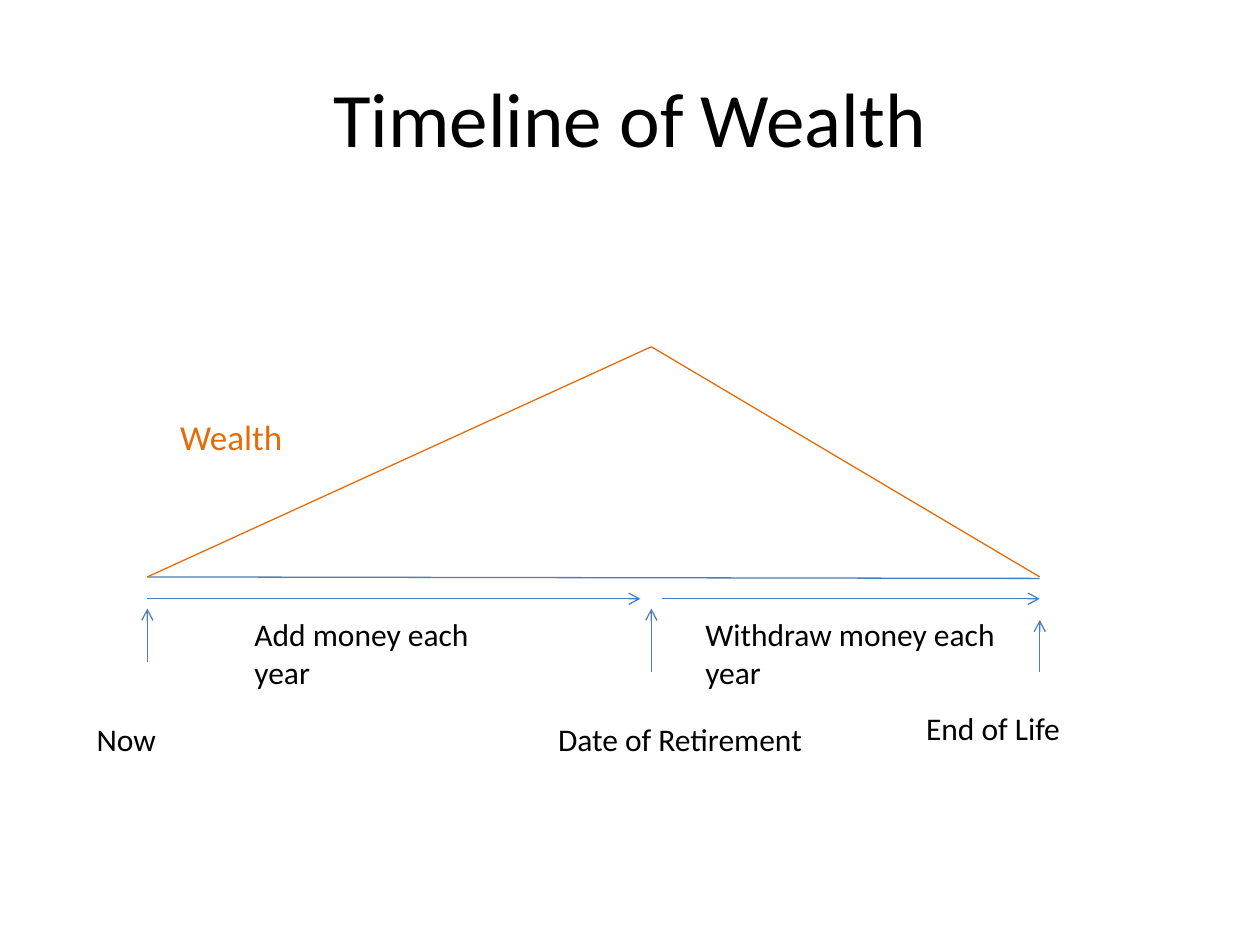
from dataclasses import dataclass

from lxml.etree import SubElement
from pptx import Presentation
from pptx.dml.color import RGBColor
from pptx.enum.shapes import MSO_CONNECTOR
from pptx.enum.text import MSO_ANCHOR, MSO_AUTO_SIZE, PP_ALIGN
from pptx.oxml.ns import qn
from pptx.slide import Slide
from pptx.text.text import TextFrame
from pptx.util import Cm, Pt


@dataclass(frozen=True)
class Theme:
    font: str = "Calibri"
    ink: RGBColor = RGBColor(0x00, 0x00, 0x00)
    time: RGBColor = RGBColor(0x4B, 0x7E, 0xBC)
    wealth: RGBColor = RGBColor(0xE4, 0x6C, 0x0A)
    title_size: float = 44
    wealth_size: float = 20
    label_size: float = 18
    line_width: float = 0.75


THEME = Theme()


@dataclass(frozen=True)
class Segment:
    x1: float
    y1: float
    x2: float
    y2: float
    color: RGBColor = THEME.time
    arrow: bool = False


@dataclass(frozen=True)
class Label:
    text: str
    left: float
    top: float
    width: float
    height: float = 1.02
    size: float = THEME.label_size
    color: RGBColor = THEME.ink


NOW, RETIREMENT, END = 2.97, 13.13, 20.96
PEAK, BASE, PHASE, MARKER = 6.99, 11.63, 12.07, 12.27

SEGMENTS = [
    Segment(NOW, BASE, END, BASE + 0.03),
    Segment(NOW, 13.34, NOW, MARKER, arrow=True),
    Segment(RETIREMENT, 13.54, RETIREMENT, MARKER, arrow=True),
    Segment(END, 13.54, END, 12.5, arrow=True),
    Segment(NOW, BASE, RETIREMENT, PEAK, THEME.wealth),
    Segment(RETIREMENT, PEAK, END, BASE, THEME.wealth),
    Segment(NOW, PHASE, RETIREMENT - 0.22, PHASE, arrow=True),
    Segment(RETIREMENT + 0.22, PHASE, END, PHASE, arrow=True),
]

LABELS = [
    Label("Now", 1.7, 14.4, 2.54),
    Label("End of Life", 18.42, 14.17, 3.38),
    Label("Date of Retirement", 11, 14.4, 5.72),
    Label("Add money each year", 4.88, MARKER, 5.08, 1.8),
    Label("Withdraw money each year", 13.97, MARKER, 6.35, 1.8),
    Label("Wealth", 3.38, 8.26, 2.74, 1.12, THEME.wealth_size, THEME.wealth),
]


def write_text(frame: TextFrame, text: str, size: float, color: RGBColor,
               align: PP_ALIGN = PP_ALIGN.LEFT) -> None:
    frame.text = text
    frame.word_wrap = True
    paragraph = frame.paragraphs[0]
    paragraph.alignment = align
    paragraph.font.name = THEME.font
    paragraph.font.size = Pt(size)
    paragraph.font.color.rgb = color


def draw_title(slide: Slide, text: str) -> None:
    title = slide.shapes.title
    title.left, title.top = Cm(1.27), Cm(0.76)
    title.width, title.height = Cm(22.86), Cm(3.18)
    title.text_frame.vertical_anchor = MSO_ANCHOR.MIDDLE
    write_text(title.text_frame, text, THEME.title_size, THEME.ink, PP_ALIGN.CENTER)


def draw_segment(slide: Slide, segment: Segment) -> None:
    connector = slide.shapes.add_connector(
        MSO_CONNECTOR.STRAIGHT, Cm(segment.x1), Cm(segment.y1),
        Cm(segment.x2), Cm(segment.y2))
    connector.line.color.rgb = segment.color
    connector.line.width = Pt(THEME.line_width)
    properties = connector._element.spPr
    if segment.arrow:
        SubElement(properties.find(qn("a:ln")), qn("a:tailEnd"), type="arrow")
    SubElement(properties, qn("a:effectLst"))


def draw_label(slide: Slide, label: Label) -> None:
    box = slide.shapes.add_textbox(
        Cm(label.left), Cm(label.top), Cm(label.width), Cm(label.height))
    write_text(box.text_frame, label.text, label.size, label.color)
    box.text_frame.auto_size = MSO_AUTO_SIZE.SHAPE_TO_FIT_TEXT


def main() -> None:
    presentation = Presentation()
    presentation.slide_width, presentation.slide_height = Cm(25.4), Cm(19.05)
    slide = presentation.slides.add_slide(
        presentation.slide_layouts.get_by_name("Title Only"))
    draw_title(slide, "Timeline of Wealth")
    for segment in SEGMENTS:
        draw_segment(slide, segment)
    for label in LABELS:
        draw_label(slide, label)
    presentation.save("out.pptx")


if __name__ == "__main__":
    main()
